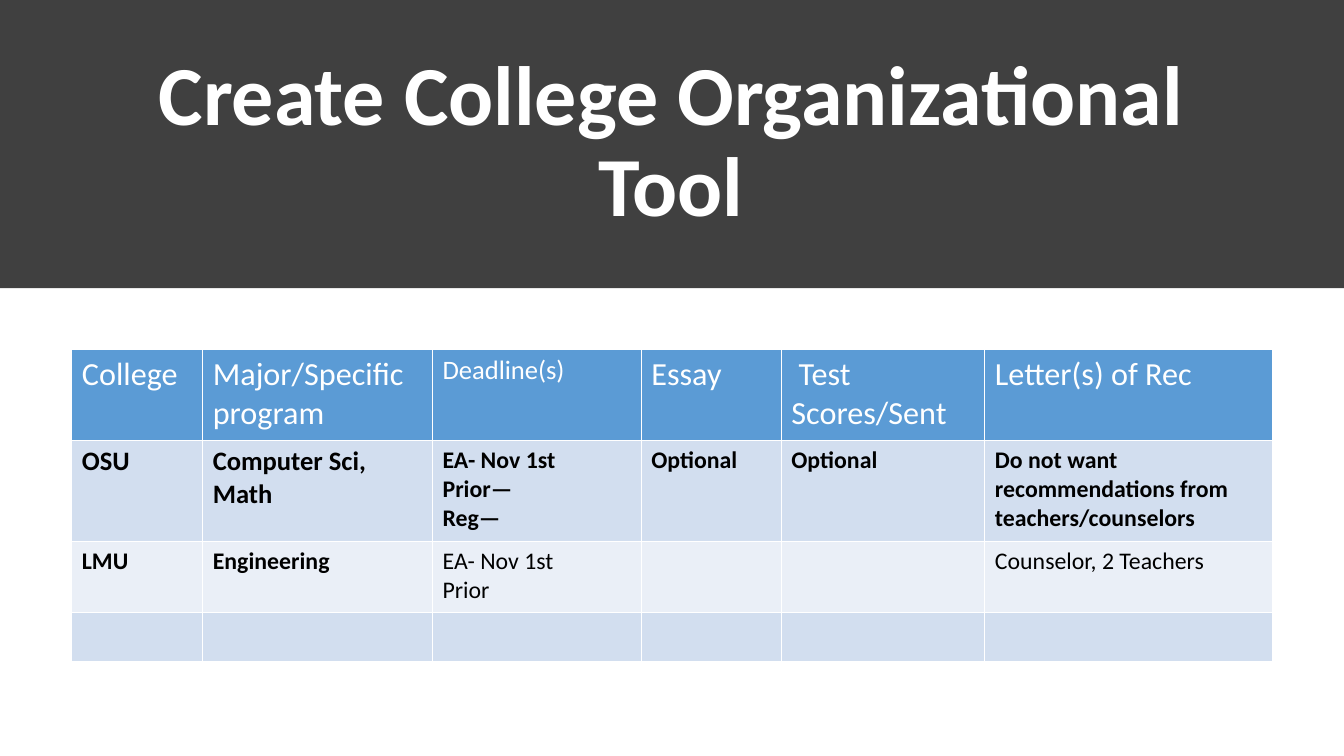
from lxml import etree
from pptx import Presentation
from pptx import util as u
from pptx.dml import color
from pptx.enum import shapes, text
from pptx.oxml import ns

FONT = "Calibri"
WHITE, BLACK, CHARCOAL = "FFFFFF", "000000", "404040"
HEADER_BLUE, BAND_BLUE, PALE_BLUE = "5B9BD5", "D2DEEF", "EAEFF7"
BAND_HEIGHT, TITLE_MARGIN = u.Cm(7.26), u.Cm(1.02)
COLUMN_WIDTHS = [3.3, 5.79, 5.26, 3.53, 5.13, 7.24]
ROW_HEIGHTS = [2.29, 2.54, 1.8, 1.22]
ROW_FILLS = [HEADER_BLUE, BAND_BLUE, PALE_BLUE, BAND_BLUE]

# Each cell holds its text, size and weight
ROWS = [
    [("College", 23, False), ("Major/Specific program", 23, False),
     ("Deadline(s)", 19, False), ("Essay", 23, False),
     (" Test\nScores/Sent", 23, False), ("Letter(s) of Rec", 23, False)],
    [("OSU", 19, True), ("Computer Sci, Math", 19, True),
     ("EA- Nov 1st\nPrior—\nReg—", 17, True), ("Optional", 17, True),
     ("Optional", 17, True),
     ("Do not want recommendations from teachers/counselors", 17, True)],
    [("LMU", 17, True), ("Engineering", 17, True),
     ("EA- Nov 1st\nPrior", 17, False), ("", 17, False), ("", 17, False),
     ("Counselor, 2 Teachers", 17, False)],
    [("", 17, False)] * 6,
]


def rgb(value):
    return color.RGBColor.from_string(value)


def set_text(frame, content, size, bold, ink):
    frame.text = content
    for para in frame.paragraphs:
        para.font.name = FONT
        para.font.size = u.Pt(size)
        para.font.bold = bold
        para.font.color.rgb = rgb(ink)


def add_band(page, width, height):
    """Put the dark band behind everything else on the page."""
    band = page.shapes.add_shape(shapes.MSO_SHAPE.RECTANGLE, 0, 0, width, height)
    band.shadow.inherit = False
    band.fill.solid()
    band.fill.fore_color.rgb = rgb(CHARCOAL)
    band.line.fill.background()
    page.shapes._spTree.insert(2, band._element)


def format_title(title, content):
    """Centre the title in the band, with equal margins above and below."""
    title.left, title.top = u.Cm(1.96), TITLE_MARGIN
    title.width, title.height = u.Cm(29.9), BAND_HEIGHT - 2 * TITLE_MARGIN
    frame = title.text_frame
    set_text(frame, content, 60, True, WHITE)
    frame.word_wrap = True
    frame.auto_size = text.MSO_AUTO_SIZE.NONE
    frame.vertical_anchor = text.MSO_ANCHOR.MIDDLE
    frame.paragraphs[0].alignment = text.PP_ALIGN.CENTER
    frame.paragraphs[0].line_spacing = 0.9


def set_borders(cell, points):
    properties = cell._tc.get_or_add_tcPr()
    for side in "LRTB":
        line = etree.SubElement(properties, ns.qn(f"a:ln{side}"), w=str(u.Pt(points)))
        fill = etree.SubElement(line, ns.qn("a:solidFill"))
        etree.SubElement(fill, ns.qn("a:srgbClr"), val=WHITE)


def add_college_table(page, left, top):
    table = page.shapes.add_table(
        len(ROWS), len(COLUMN_WIDTHS), left, top,
        u.Cm(sum(COLUMN_WIDTHS)), u.Cm(sum(ROW_HEIGHTS))).table
    for column, width in zip(table.columns, COLUMN_WIDTHS):
        column.width = u.Cm(width)
    for row, height, fill, entries in zip(table.rows, ROW_HEIGHTS, ROW_FILLS, ROWS):
        row.height = u.Cm(height)
        ink = WHITE if fill == HEADER_BLUE else BLACK
        for cell, (content, size, bold) in zip(row.cells, entries):
            set_text(cell.text_frame, content, size, bold, ink)
            set_borders(cell, 1)
            cell.fill.solid()
            cell.fill.fore_color.rgb = rgb(fill)


def main():
    deck = Presentation()
    deck.slide_width, deck.slide_height = u.Cm(33.87), u.Cm(19.05)
    page = deck.slides.add_slide(deck.slide_layouts.get_by_name("Title Only"))
    add_band(page, deck.slide_width, BAND_HEIGHT)
    format_title(page.shapes.title, "Create College Organizational Tool")
    add_college_table(page, u.Cm(1.81), u.Cm(8.81))
    deck.save("out.pptx")


if __name__ == "__main__":
    main()
